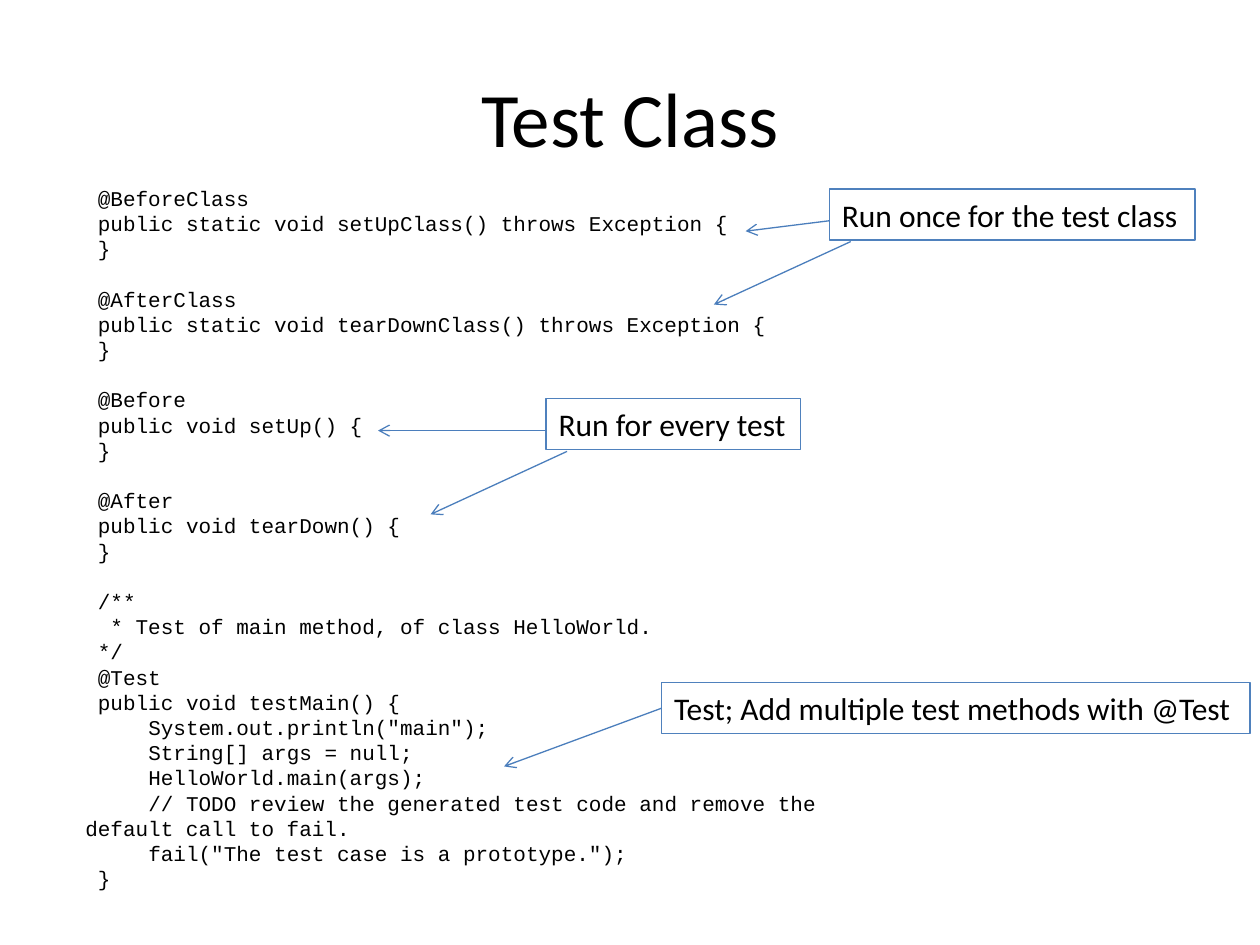
from lxml import etree
from pptx import Presentation
from pptx.dml.color import RGBColor
from pptx.enum.shapes import MSO_CONNECTOR, MSO_SHAPE
from pptx.enum.text import MSO_ANCHOR, MSO_AUTO_SIZE, PP_ALIGN
from pptx.oxml.ns import qn
from pptx.util import Cm, Pt

LEFT, CENTER = PP_ALIGN.LEFT, PP_ALIGN.CENTER
MIDDLE = MSO_ANCHOR.MIDDLE
FIT_SHAPE = MSO_AUTO_SIZE.SHAPE_TO_FIT_TEXT
RECT, STRAIGHT = MSO_SHAPE.RECTANGLE, MSO_CONNECTOR.STRAIGHT
LEFT_SIDE = 1

THEME = {
    "text": RGBColor(0x00, 0x00, 0x00),
    "border": RGBColor(0x4F, 0x81, 0xBD),
    "arrow": RGBColor(0x4B, 0x7E, 0xBC),
    "body_font": "Calibri",
    "code_font": "Courier New",
    "title_size": Pt(44),
    "note_size": Pt(18),
    "code_size": Pt(12),
    "code_line": Pt(14.4),
    "code_column": Pt(7.2),
    "line_width": Pt(0.75),
}

TITLE = "Test Class"

# Blocks of code, each line with its indent in columns
CODE = [
    [(1, "@BeforeClass"),
     (1, "public static void setUpClass() throws Exception {"),
     (1, "}")],
    [(1, "@AfterClass"),
     (1, "public static void tearDownClass() throws Exception {"),
     (1, "}")],
    [(1, "@Before"), (1, "public void setUp() {"), (1, "}")],
    [(1, "@After"), (1, "public void tearDown() {"), (1, "}")],
    [(1, "/**"),
     (2, "* Test of main method, of class HelloWorld."),
     (1, "*/"),
     (1, "@Test"),
     (1, "public void testMain() {"),
     (5, 'System.out.println("main");'),
     (5, "String[] args = null;"),
     (5, "HelloWorld.main(args);"),
     (5, "// TODO review the generated test code and remove the "
         "default call to fail."),
     (5, 'fail("The test case is a prototype.");'),
     (1, "}")],
]

# Positions in cm; an arrow without a start leaves the middle of the left side
NOTE_HEIGHT = 1.03
NOTES = [
    {"text": "Run once for the test class", "at": (16.72, 3.81), "width": 7.37,
     "arrows": [((16.72, 4.45), (15.03, 4.66)), ((17.15, 4.87), (14.39, 6.14))]},
    {"text": "Run for every test", "at": (11.01, 8.04), "width": 5.13,
     "arrows": [((11.01, 8.68), (7.62, 8.68)), ((11.43, 9.1), (8.68, 10.37))]},
    {"text": "Test; Add multiple test methods with @Test", "at": (13.34, 13.76),
     "width": 11.86, "arrows": [(None, (10.16, 15.45))]},
]


def add_run(p, text, font, size):
    r = p.add_run()
    r.text = text
    r.font.name, r.font.size = THEME[font], THEME[size]
    r.font.color.rgb = THEME["text"]


def add_title(s):
    title = s.shapes.title
    title.left, title.top, title.width, title.height = (
        Cm(v) for v in (1.27, 0.76, 22.86, 3.18))
    tf = title.text_frame
    tf.vertical_anchor = MIDDLE
    p = tf.paragraphs[0]
    p.alignment = CENTER
    add_run(p, TITLE, "body_font", "title_size")


def add_code(s):
    tf = s.shapes.add_textbox(Cm(1.47), Cm(3.61), Cm(16.31), Cm(14.63)).text_frame
    tf.word_wrap = True
    p = None
    for block in CODE:
        for i, (columns, text) in enumerate(block):
            starts_block = p is not None and i == 0
            p = tf.paragraphs[0] if p is None else tf.add_paragraph()
            p.line_spacing = THEME["code_line"]
            if starts_block:
                p.space_before = THEME["code_line"]
            p._p.get_or_add_pPr().set("indent", str(columns * THEME["code_column"]))
            add_run(p, text, "code_font", "code_size")


def add_arrow(s, box, start, end):
    x, y = start or (0, 0)
    line = s.shapes.add_connector(STRAIGHT, Cm(x), Cm(y), Cm(end[0]), Cm(end[1]))
    if start is None:
        line.begin_connect(box, LEFT_SIDE)
    line.line.color.rgb = THEME["arrow"]
    line.line.width = THEME["line_width"]
    etree.SubElement(line.line._get_or_add_ln(), qn("a:tailEnd"), type="arrow")
    etree.SubElement(line._element.spPr, qn("a:effectLst"))


def add_note(s, note):
    x, y = note["at"]
    box = s.shapes.add_shape(RECT, Cm(x), Cm(y), Cm(note["width"]), Cm(NOTE_HEIGHT))
    box.shadow.inherit = False
    box.fill.background()
    box.line.color.rgb = THEME["border"]
    box.line.width = THEME["line_width"]
    tf = box.text_frame
    tf.word_wrap = False
    tf.auto_size = FIT_SHAPE
    p = tf.paragraphs[0]
    p.alignment = LEFT
    add_run(p, note["text"], "body_font", "note_size")
    for start, end in note["arrows"]:
        add_arrow(s, box, start, end)


def main():
    prs = Presentation()
    prs.slide_width, prs.slide_height = Cm(25.4), Cm(19.05)
    s = prs.slides.add_slide(prs.slide_layouts[5])
    add_title(s)
    add_code(s)
    for note in NOTES:
        add_note(s, note)
    prs.save("out.pptx")


if __name__ == "__main__":
    main()
